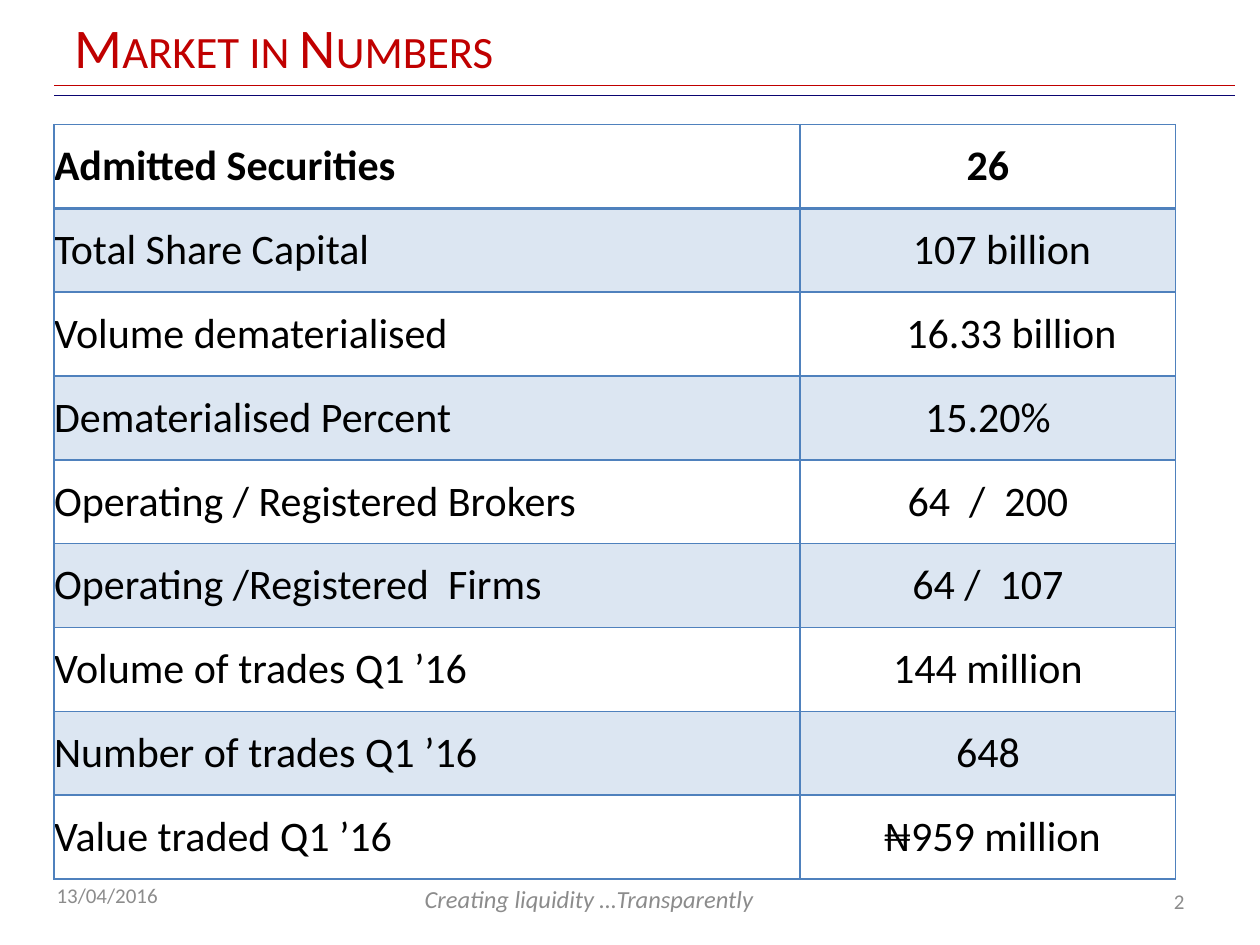
from lxml import etree
from pptx import Presentation
from pptx.dml.color import RGBColor
from pptx.enum.shapes import MSO_CONNECTOR
from pptx.enum.text import MSO_ANCHOR, PP_ALIGN
from pptx.oxml.ns import qn
from pptx.util import Cm, Pt

STRAIGHT = MSO_CONNECTOR.STRAIGHT
TOP, MIDDLE = MSO_ANCHOR.TOP, MSO_ANCHOR.MIDDLE
LEFT, CENTER, RIGHT = PP_ALIGN.LEFT, PP_ALIGN.CENTER, PP_ALIGN.RIGHT

RED, NAVY, GREY, BLACK = "C00000", "0A0571", "8C8C8C", "000000"
BLUE, PALE_BLUE = "4F81BD", "DCE6F2"

FIGURES = [
    ("Admitted Securities", "26", 0),
    ("Total Share Capital", "107 billion", 0.57),
    ("Volume dematerialised", "16.33 billion", 0.95),
    ("Dematerialised Percent", "15.20%", 0),
    ("Operating / Registered Brokers", "64  /  200", 0),
    ("Operating /Registered  Firms", "64 /  107", 0),
    ("Volume of trades Q1 ’16", "144 million", 0),
    ("Number of trades Q1 ’16", "648", 0),
    ("Value traded Q1 ’16", "₦959 million", 0.18),
]


def color(value):
    return RGBColor.from_string(value)


def write(frame, text, size=24, tint=BLACK, align=LEFT, bold=False, italic=False,
          small_caps=False):
    para = frame.paragraphs[0]
    para.alignment = align
    span = para.add_run()
    span.text = text
    font = span.font
    font.name, font.size = "Calibri", Pt(size)
    font.bold, font.italic = bold, italic
    font.color.rgb = color(tint)
    if small_caps:
        span._r.get_or_add_rPr().set("cap", "small")


class SlideBuilder:
    def __init__(self, slide, border=BLUE, band=PALE_BLUE):
        self.slide = slide
        self.border = border
        self.band = band

    def rule(self, y, tint):
        line = self.slide.shapes.add_connector(STRAIGHT, Cm(1.09), Cm(y), Cm(24.89), Cm(y))
        line.line.color.rgb = color(tint)
        line.line.width = Pt(0.75)
        etree.SubElement(line._element.spPr, qn("a:effectLst"))

    def text(self, x, y, width, height, text, anchor=MIDDLE, **style):
        box = self.slide.shapes.add_textbox(Cm(x), Cm(y), Cm(width), Cm(height))
        frame = box.text_frame
        frame.word_wrap = True
        frame.vertical_anchor = anchor
        write(frame, text, **style)

    def edge(self, cell, side, width):
        line = etree.SubElement(cell._tc.get_or_add_tcPr(), qn(f"a:ln{side}"), w=str(Pt(width)))
        fill = etree.SubElement(line, qn("a:solidFill"))
        etree.SubElement(fill, qn("a:srgbClr"), val=self.border)

    def cell(self, cell, text, row, indent=0, **style):
        cell.margin_left = Cm(indent)
        cell.margin_right = cell.margin_top = cell.margin_bottom = 0
        cell.vertical_anchor = MIDDLE
        write(cell.text_frame, text, bold=row == 0, **style)
        widths = {"L": 1, "R": 1, "T": 2 if row == 1 else 1, "B": 2 if row == 0 else 1}
        for side, width in widths.items():
            self.edge(cell, side, width)
        if row % 2:
            cell.fill.solid()
            cell.fill.fore_color.rgb = color(self.band)
        else:
            cell.fill.background()

    def table(self, x, y, columns, row_height, rows):
        table = self.slide.shapes.add_table(
            len(rows), len(columns), Cm(x), Cm(y),
            Cm(sum(columns)), Cm(row_height * len(rows))).table
        table.first_row = table.horz_banding = False
        for column, width in zip(table.columns, columns):
            column.width = Cm(width)
        for index, (label, value, indent) in enumerate(rows):
            table.rows[index].height = Cm(row_height)
            self.cell(table.cell(index, 0), label, index)
            self.cell(table.cell(index, 1), value, index, indent, align=CENTER)


def main():
    deck = Presentation()
    deck.slide_width, deck.slide_height = Cm(25.4), Cm(19.05)
    page = SlideBuilder(deck.slides.add_slide(deck.slide_layouts[6]))
    page.rule(1.93, NAVY)
    page.rule(1.73, RED)
    page.text(8.31, 17.7, 8.05, 1.02, "Creating liquidity …Transparently",
              anchor=TOP, size=14, tint=GREY, italic=True)
    page.text(0.89, 17.53, 5.92, 1.02, "13/04/2016", size=12, tint=GREY)
    page.text(1.25, 0.15, 20.22, 1.55, "Market in Numbers",
              size=32, tint=RED, small_caps=True)
    page.table(1.09, 2.51, (15.04, 7.57), 1.69, FIGURES)
    page.text(18.21, 17.65, 5.92, 1.02, "2", size=12, tint=GREY, align=RIGHT)
    deck.save("out.pptx")


if __name__ == "__main__":
    main()
